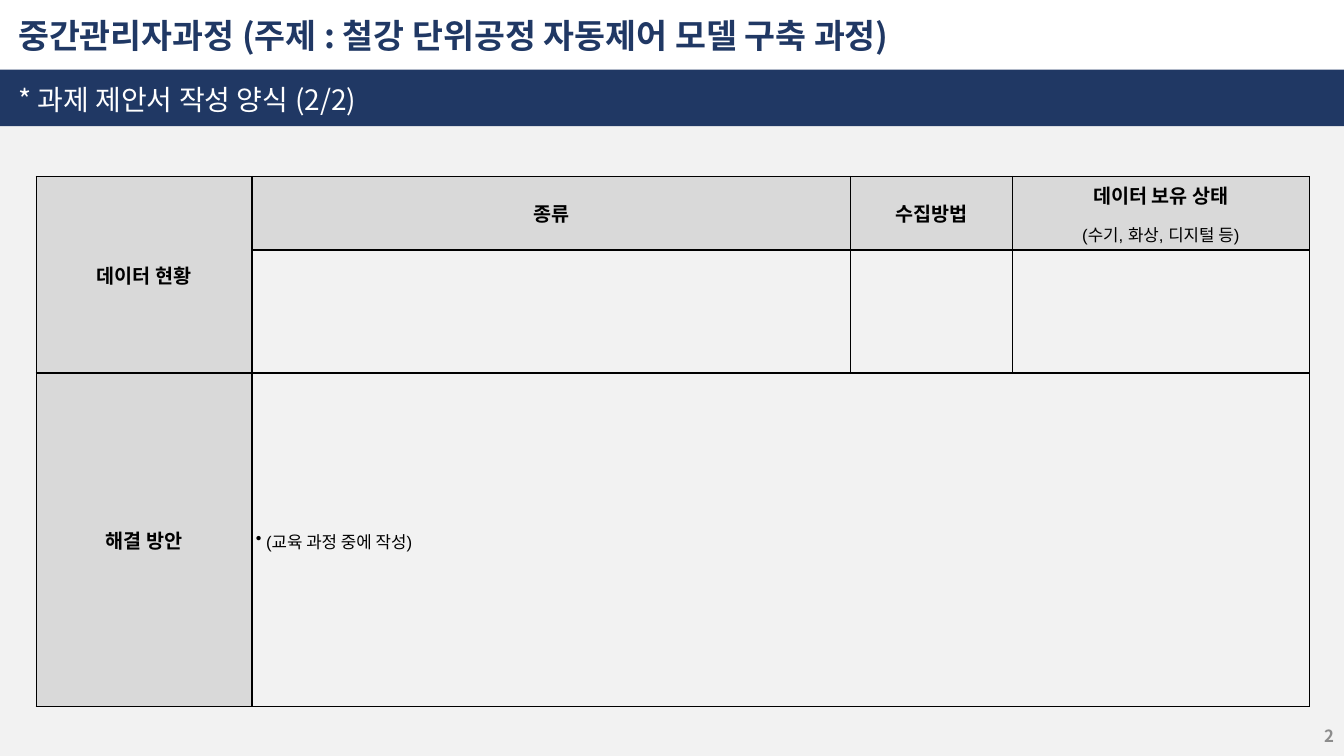
from lxml import etree
from pptx import Presentation
from pptx.dml.color import RGBColor
from pptx.enum.shapes import MSO_SHAPE
from pptx.enum.text import MSO_ANCHOR, MSO_AUTO_SIZE, PP_ALIGN
from pptx.oxml import parse_xml
from pptx.oxml.ns import nsdecls, qn
from pptx.util import Inches, Pt

RECT = MSO_SHAPE.RECTANGLE
MID = MSO_ANCHOR.MIDDLE
FIXED = MSO_AUTO_SIZE.NONE
LEFT, MIDST, RIGHT = PP_ALIGN.LEFT, PP_ALIGN.CENTER, PP_ALIGN.RIGHT
SANS, NOTO = "Arial", "Noto Sans CJK KR"
NAVY, PALE, GRAY, BLACK = "203864", "F2F2F2", "D9D9D9", "000000"
hue = RGBColor.from_string

deck = Presentation()
deck.slide_width, deck.slide_height = Inches(13.33), Inches(7.5)
W, H = deck.slide_width / 100, deck.slide_height / 100
slide = deck.slides.add_slide(deck.slide_layouts[1])
tree = slide.shapes


def area(x, y, wide, high):
    return [round(v) for v in (x * W, y * H, wide * W, high * H)]


def write(frame, text, size=14, bold=True, tone=BLACK, face=SANS, align=MIDST,
          before=0, after=0, line=1.0, mark=None, more=False):
    para = frame.add_paragraph() if more else frame.paragraphs[0]
    para.alignment, para.line_spacing = align, line
    para.space_before, para.space_after = Pt(before), Pt(after)
    props = para._p.get_or_add_pPr()
    props.set("marL", str(Inches(0.1) if mark else 0))
    props.set("indent", str(-Inches(0.1) if mark else 0))
    if mark:
        etree.SubElement(props, qn("a:buChar")).set("char", mark)
    else:
        etree.SubElement(props, qn("a:buNone"))
    run = para.add_run()
    run.text = text
    font = run.font
    font.name, font.size, font.bold = face, Pt(size), bold
    font.color.rgb = hue(tone)
    asian = etree.Element(qn("a:ea"))
    asian.set("typeface", NOTO)
    font._element.find(qn("a:latin")).addnext(asian)


bands = [(12.53, 87.47, PALE), (9.2, 7.47, NAVY)]
for spot, (top, high, tone) in enumerate(bands):
    band = tree.add_shape(RECT, *area(0, top, 100, high))
    band.shadow.inherit = False
    band.fill.solid()
    band.fill.fore_color.rgb = hue(tone)
    band.line.fill.background()
    tree._spTree.insert(2 + spot, band._element)

heads = [
    (tree.title, 2, 5.33, "중간관리자과정 (주제 : 철강 단위공정 자동제어 모델 구축 과정)", 24, True, NAVY),
    (slide.placeholders[1], 10.93, 4.53, "* 과제 제안서 작성 양식 (2/2)", 20, False, "FFFFFF"),
]
for head, top, high, text, size, bold, tone in heads:
    head.left, head.top, head.width, head.height = area(1.35, top, 83.42, high)
    frame = head.text_frame
    frame.margin_left = frame.margin_right = frame.margin_top = frame.margin_bottom = 0
    frame.vertical_anchor, frame.auto_size, frame.word_wrap = MID, FIXED, True
    write(frame, text, size, bold, tone, NOTO, LEFT)

wides = [16.05, 44.56, 12, 22.13]
highs = [9.33, 16.27, 44.13]
grid = tree.add_table(3, 4, *area(2.7, 23.33, sum(wides), sum(highs))).table
grid.first_row = grid.horz_banding = False
for col, wide in zip(grid.columns, wides):
    col.width = round(wide * W)
for row, high in zip(grid.rows, highs):
    row.height = round(high * H)
grid.cell(0, 0).merge(grid.cell(1, 0))
grid.cell(2, 1).merge(grid.cell(2, 3))

for r in range(3):
    for c in range(4):
        cell = grid.cell(r, c)
        cell.vertical_anchor = MID
        cell.margin_left = cell.margin_right = cell.margin_top = cell.margin_bottom = Inches(0.04)
        if r == 0 or c == 0:
            cell.fill.solid()
            cell.fill.fore_color.rgb = hue(GRAY)
        else:
            cell.fill.background()
        for spot, side in enumerate("LRTB"):
            cell._tc.get_or_add_tcPr().insert(spot, parse_xml(
                f'<a:ln{side} {nsdecls("a")} w="{Pt(1)}"><a:solidFill>'
                f'<a:srgbClr val="{BLACK}"/></a:solidFill></a:ln{side}>'))

labels = [(0, 0, "데이터 현황"), (0, 1, "종류"), (0, 2, "수집방법"),
          (0, 3, "데이터 보유 상태"), (2, 0, "해결 방안")]
for r, c, text in labels:
    write(grid.cell(r, c).text_frame, text, after=3)
write(grid.cell(0, 3).text_frame, "(수기, 화상, 디지털 등)", 12, False,
      before=6, after=3, more=True)
write(grid.cell(2, 1).text_frame, "(교육 과정 중에 작성)", 12, False,
      align=LEFT, after=3, line=1.1, mark="•")

page = tree.add_textbox(*area(77.5, 94.67, 22.5, 5.33)).text_frame
page.word_wrap, page.vertical_anchor = True, MID
write(page, "2", 12, True, "8C8C8C", NOTO, RIGHT)

deck.save("out.pptx")
